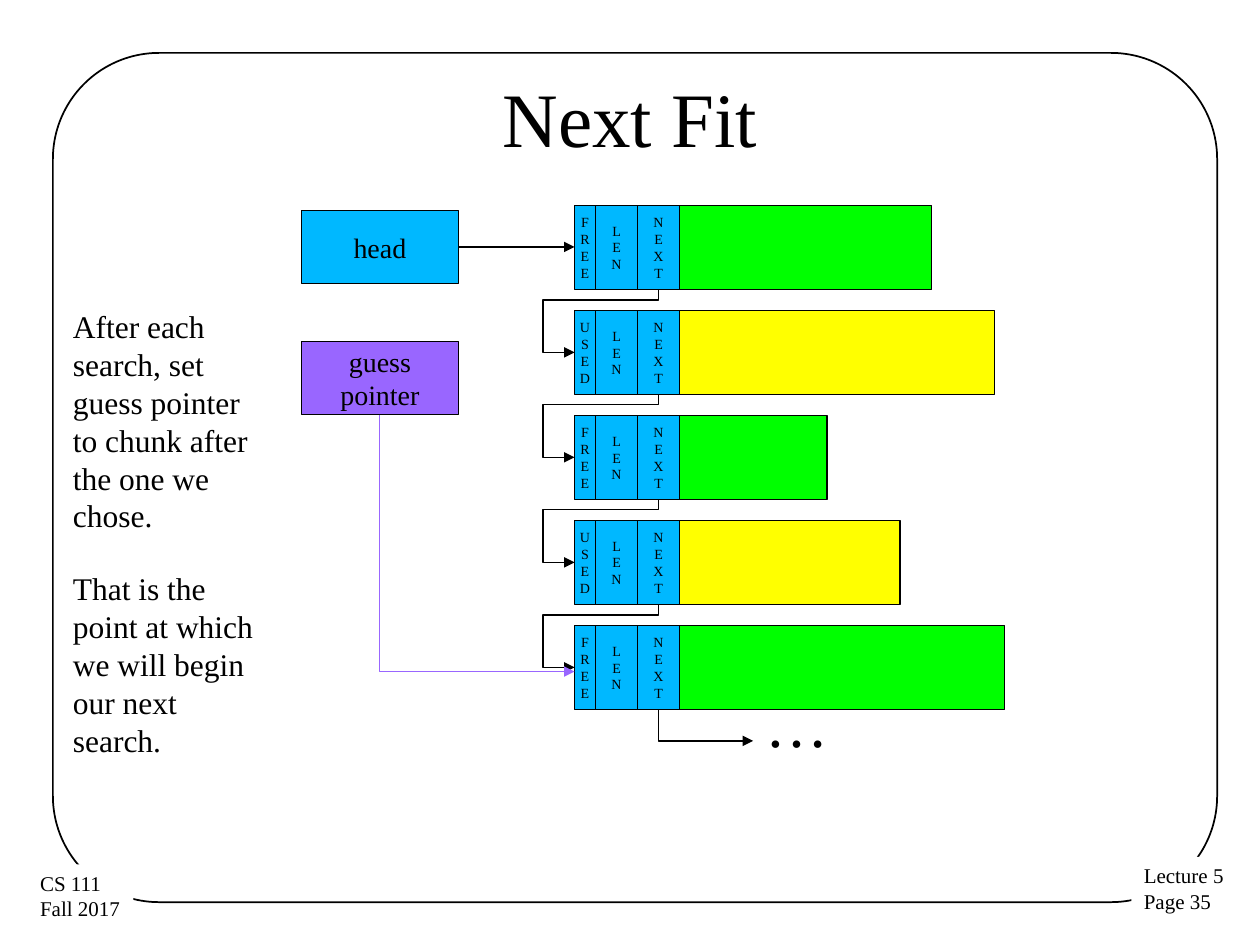
import pptx
import pptx.dml.color
import pptx.enum.shapes
import pptx.enum.text
import pptx.oxml
import pptx.oxml.ns
import pptx.util
from pptx.util import Inches

FONT = "Times New Roman"
BLACK, WHITE, BLUE, PURPLE = "000000", "FFFFFF", "00B8FF", "9966FF"
CHUNK_COLOURS = {"FREE": "00FF00", "USED": "FFFF00"}
CHUNKS = [("FREE", 2), ("USED", 2.5), ("FREE", 1.17), ("USED", 1.75), ("FREE", 2.58)]
CHUNK_HEIGHT, CHUNK_PITCH = 2 / 3, 5 / 6
FIELD_WIDTHS = [1 / 6, 1 / 3, 1 / 3]
CENTER = pptx.enum.text.PP_ALIGN.CENTER
MIDDLE = pptx.enum.text.MSO_ANCHOR.MIDDLE


def colour(hex_string):
    return pptx.dml.color.RGBColor.from_string(hex_string)


def write(shape, lines, size, align=None, wrap=False):
    frame = shape.text_frame
    frame.word_wrap = wrap
    frame.text = "\n".join(lines)
    for paragraph in frame.paragraphs:
        paragraph.alignment = align
        paragraph.font.name = FONT
        paragraph.font.size = pptx.util.Pt(size)
        paragraph.font.color.rgb = colour(BLACK)


def add_box(slide, left, top, width, height, fill, lines=(), size=16):
    shape = slide.shapes.add_shape(
        pptx.enum.shapes.MSO_SHAPE.RECTANGLE,
        Inches(left), Inches(top), Inches(width), Inches(height))
    shape.shadow.inherit = False
    shape.fill.solid()
    shape.fill.fore_color.rgb = colour(fill)
    shape.line.color.rgb = colour(BLACK)
    shape.line.width = pptx.util.Pt(0.75)
    if lines:
        write(shape, lines, size, CENTER)
        shape.text_frame.vertical_anchor = MIDDLE
    return shape


def add_text(slide, left, top, width, height, lines, size, wrap=True):
    box = slide.shapes.add_textbox(Inches(left), Inches(top), Inches(width), Inches(height))
    write(box, lines, size, pptx.enum.text.PP_ALIGN.LEFT, wrap)
    return box


def add_arrow(slide, start, end, line_colour=BLACK, kind="STRAIGHT"):
    connector = slide.shapes.add_connector(
        getattr(pptx.enum.shapes.MSO_CONNECTOR, kind),
        *(Inches(value) for value in (*start, *end)))
    connector.line.color.rgb = colour(line_colour)
    connector.line.width = pptx.util.Pt(0.75)
    properties = connector._element.spPr
    tail = pptx.oxml.parse_xml(
        f'<a:tailEnd {pptx.oxml.ns.nsdecls("a")} type="triangle"/>')
    properties.find(pptx.oxml.ns.qn("a:ln")).append(tail)
    properties.append(pptx.oxml.parse_xml(f'<a:effectLst {pptx.oxml.ns.nsdecls("a")}/>'))
    return connector


def add_elbow(slide, start, end, preset, rotation, flip=False, adjustments=(), line_colour=BLACK):
    """An elbow that leaves downwards: its frame is turned by a quarter."""
    across, down = abs(end[0] - start[0]), abs(end[1] - start[1])
    left = (start[0] + end[0] - down) / 2
    top = (start[1] + end[1] - across) / 2
    connector = add_arrow(slide, (left, top), (left + down, top + across), line_colour, "ELBOW")
    properties = connector._element.spPr
    frame = properties.find(pptx.oxml.ns.qn("a:xfrm"))
    frame.set("rot", str(rotation * 60000))
    if flip:
        frame.set("flipH", "1")
    guides = "".join(f'<a:gd name="adj{number}" fmla="val {round(value * 100000)}"/>'
                     for number, value in enumerate(adjustments, 1))
    geometry = properties.find(pptx.oxml.ns.qn("a:prstGeom"))
    properties.replace(geometry, pptx.oxml.parse_xml(
        f'<a:prstGeom {pptx.oxml.ns.nsdecls("a")} prst="{preset}">'
        f'<a:avLst>{guides}</a:avLst></a:prstGeom>'))


def add_page_frame(slide, left, top, width, height):
    frame = slide.shapes.add_shape(
        pptx.enum.shapes.MSO_SHAPE.ROUNDED_RECTANGLE,
        Inches(left), Inches(top), Inches(width), Inches(height))
    frame.adjustments[0] = 0.125
    frame.shadow.inherit = False
    frame.fill.background()
    frame.line.color.rgb = colour(BLACK)
    frame.line.width = pptx.util.Pt(1)
    # Corner labels cover the frame
    for label_left, label_top, lines in [(8.98, 6.8, ["Lecture 5", "Page 35"]),
                                         (0.22, 6.86, ["CS 111", "Fall 2017"])]:
        label = add_text(slide, label_left, label_top, 0.84, 0.51, lines, 12, wrap=False)
        label.fill.solid()
        label.fill.fore_color.rgb = colour(WHITE)


def add_title(slide, left, top, width, height):
    title = slide.shapes.title
    title.left, title.top = Inches(left), Inches(top)
    title.width, title.height = Inches(width), Inches(height)
    write(title, ["Next Fit"], 44, CENTER, wrap=True)
    title.text_frame.vertical_anchor = MIDDLE


def add_notes_column(slide, left, width):
    add_text(slide, left, 2.39, width, 1.9, [
        "After each search, set guess pointer to chunk after the one we chose."], 18)
    add_text(slide, left, 4.47, width, 1.6, [
        "That is the point at which we will begin our next search."], 18)


def add_chunk_list(slide, left, top):
    next_x = left + sum(FIELD_WIDTHS[:2]) + FIELD_WIDTHS[2] / 2
    tops = [top + row * CHUNK_PITCH for row in range(len(CHUNKS))]
    for chunk_top, (state, size) in zip(tops, CHUNKS):
        field_left = left
        for name, width in zip([state, "LEN", "NEXT"], FIELD_WIDTHS):
            add_box(slide, field_left, chunk_top, width, CHUNK_HEIGHT, BLUE, list(name), 8)
            field_left += width
        add_box(slide, field_left, chunk_top, size, CHUNK_HEIGHT, CHUNK_COLOURS[state])

    # Each next field points to the following chunk
    for chunk_top, following in zip(tops, tops[1:]):
        add_elbow(slide, (next_x, chunk_top + CHUNK_HEIGHT),
                  (left, following + CHUNK_HEIGHT / 2),
                  "bentConnector4", 90, adjustments=(0.167, 1.375))

    # The list goes on
    list_end = tops[-1] + CHUNK_HEIGHT
    add_text(slide, next_x + 0.75, list_end - 0.25, 1.08, 0.7, ["…"], 36)
    add_elbow(slide, (next_x, list_end), (next_x + 0.75, list_end + 0.25),
              "bentConnector2", 270, flip=True)


def add_pointers(slide, left, width, height, list_left):
    add_box(slide, left, 1.67, width, height, BLUE, ["head"])
    add_arrow(slide, (left + width, 1.96), (list_left, 1.96))
    add_box(slide, left, 2.71, width, height, PURPLE, ["guess", "pointer"])
    add_elbow(slide, (left + width / 2, 2.71 + height), (list_left, 5.33),
              "bentConnector2", 270, flip=True, line_colour=PURPLE)


def main():
    presentation = pptx.Presentation()
    presentation.slide_width, presentation.slide_height = Inches(10), Inches(7.5)
    slide = presentation.slides.add_slide(presentation.slide_layouts[5])
    add_page_frame(slide, 0.42, 0.42, 9.24, 6.74)
    add_title(slide, 0.5, 0.3, 9, 1.25)
    add_chunk_list(slide, 4.56, 1.63)
    add_pointers(slide, 2.39, 1.25, 0.58, 4.56)
    add_notes_column(slide, 0.48, 1.75)
    presentation.save("out.pptx")


if __name__ == "__main__":
    main()
